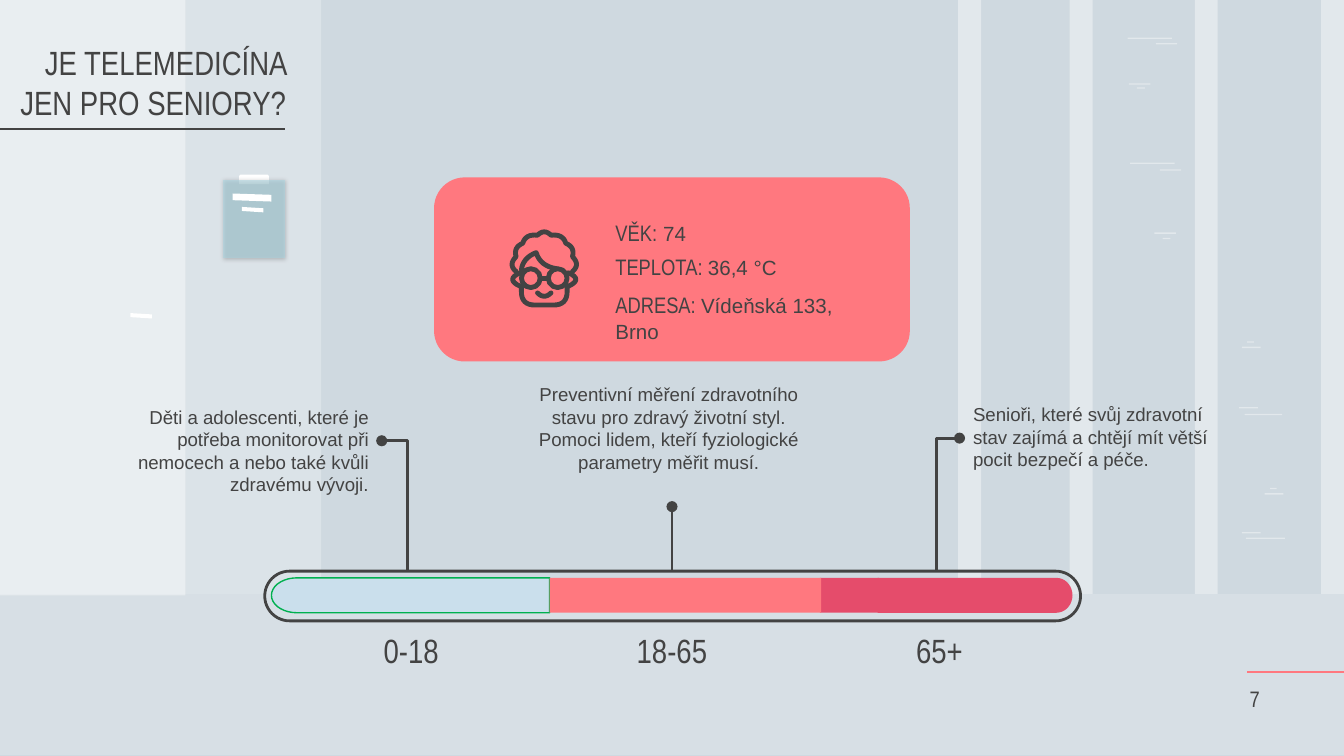
import math
from dataclasses import dataclass

import pptx
import pptx.dml.color
import pptx.enum.shapes
import pptx.enum.text
import pptx.oxml
import pptx.oxml.ns
import pptx.util

INK, CORAL, WHITE = "434343", "FF787F", "FFFFFF"
WALL_HEIGHT = 4.42
NARROW, SANS = "Arial Narrow", "Arial"
SHAPES = pptx.enum.shapes.MSO_SHAPE
ALIGN = pptx.enum.text.PP_ALIGN
ANCHOR = pptx.enum.text.MSO_ANCHOR


@dataclass
class Box:
    left: float
    top: float
    width: float
    height: float


@dataclass
class Span:
    text: str
    size: float = 10
    font: str = SANS


@dataclass
class Callout:
    dot: tuple
    foot: tuple
    bent: bool


def length(inches: float) -> pptx.util.Length:
    return pptx.util.Cm(inches * 2.54)


def color(value: str) -> pptx.dml.color.RGBColor:
    return pptx.dml.color.RGBColor.from_string(value)


def add_xml(parent, tag: str, **attributes):
    child = pptx.oxml.parse_xml(f'<a:{tag} {pptx.oxml.ns.nsdecls("a")}/>')
    for name, value in attributes.items():
        child.set(name, str(value))
    parent.append(child)
    return child


def paint(shape, fill=None, opacity=100, line=None, weight=1.5) -> None:
    shape.shadow.inherit = False
    if fill:
        shape.fill.solid()
        shape.fill.fore_color.rgb = color(fill)
        if opacity < 100:
            tint = shape._element.spPr.find(".//" + pptx.oxml.ns.qn("a:srgbClr"))
            add_xml(tint, "alpha", val=opacity * 1000)
    else:
        shape.fill.background()
    if line:
        shape.line.color.rgb = color(line)
        shape.line.width = pptx.util.Pt(weight)
    else:
        shape.line.fill.background()


def add_block(page, box: Box, kind=SHAPES.RECTANGLE, **style):
    shape = page.shapes.add_shape(kind, length(box.left), length(box.top),
                                  length(box.width), length(box.height))
    paint(shape, **style)
    return shape


def add_outline(page, points: list, closed=True, **style):
    corners = [(length(x), length(y)) for x, y in points]
    builder = page.shapes.build_freeform(*corners[0], scale=1.0)
    builder.add_line_segments(corners[1:], close=closed)
    shape = builder.convert_to_shape()
    paint(shape, **style)
    return shape


def add_line(page, start: tuple, end: tuple, line: str, bent=False):
    kinds = pptx.enum.shapes.MSO_CONNECTOR
    link = page.shapes.add_connector(kinds.ELBOW if bent else kinds.STRAIGHT,
                                     *map(length, start + end))
    link.line.color.rgb = color(line)
    link.line.width = pptx.util.Pt(1.5)
    properties = link._element.spPr
    if bent:
        properties.find(pptx.oxml.ns.qn("a:prstGeom")).set("prst", "bentConnector2")
    add_xml(properties, "effectLst")
    return link


def add_text(page, box: Box, spans: list, align=ALIGN.LEFT, anchor=ANCHOR.TOP,
             holder=None, margins=(0.1, 0.1, 0.1, 0.1), after=0) -> None:
    if holder is None:
        holder = page.shapes.add_textbox(0, 0, 0, 0)
    page.shapes._spTree.append(holder._element)  # bring to the front
    holder.left, holder.top = length(box.left), length(box.top)
    holder.width, holder.height = length(box.width), length(box.height)
    frame = holder.text_frame
    frame.word_wrap = True
    frame.auto_size = pptx.enum.text.MSO_AUTO_SIZE.NONE
    frame.vertical_anchor = anchor
    (frame.margin_left, frame.margin_top,
     frame.margin_right, frame.margin_bottom) = map(length, margins)
    para = frame.paragraphs[0]
    para.alignment = align
    para.space_before, para.space_after = pptx.util.Pt(0), pptx.util.Pt(after)
    settings = para._p.get_or_add_pPr()
    settings.set("marL", "0")
    settings.set("indent", "0")
    add_xml(settings, "buNone")
    for span in spans:
        run = para.add_run()
        run.text = span.text
        run.font.size, run.font.name = pptx.util.Pt(span.size), span.font
        run.font.color.rgb = color(INK)


def curve(points: list) -> list:
    """Flatten a start point followed by (control, end) pairs."""
    result = [points[0]]
    for control, end in zip(points[1::2], points[2::2]):
        start = result[-1]
        for t in (step / 8 for step in range(1, 9)):
            result.append(tuple((1 - t) ** 2 * a + 2 * t * (1 - t) * b + t * t * c
                                for a, b, c in zip(start, control, end)))
    return result


def mirror(points: list) -> list:
    return [(8.1 - x, y) for x, y in reversed(points)]


def rounded_end(center: float, radius: float) -> list:
    """Half an ellipse; a negative radius bulges to the left."""
    angles = [math.radians(a) for a in range(-90, 91, 10)]
    return [(center + radius * math.cos(a), 4.43 + 0.13 * math.sin(a)) for a in angles]


def draw_room(page) -> None:
    page.background.fill.solid()
    page.background.fill.fore_color.rgb = color("CFD9E0")
    add_block(page, Box(0, 0, 1.38, 4.43), fill=WHITE, opacity=40)
    # Clipboard
    add_block(page, Box(1.78, 1.3, 0.22, 0.07), SHAPES.ROUND_2_SAME_RECTANGLE, fill=WHITE)
    board = add_block(page, Box(1.66, 1.34, 0.46, 0.58), fill="86C7D8", opacity=51)
    effects = board._element.spPr.find(pptx.oxml.ns.qn("a:effectLst"))
    shadow = add_xml(effects, "outerShdw", blurRad=27940, dist=10160, dir=2520000)
    add_xml(add_xml(shadow, "srgbClr", val="000000"), "alpha", val=52000)
    for x, y, width, height in [(1.73, 1.44, 0.29, 0.06), (1.8, 1.54, 0.16, 0.04),
                                (0.97, 2.33, 0.16, 0.04)]:
        add_outline(page, [(x, y), (x + width, y + 0.01), (x + width, y + height),
                           (x, y + height - 0.01)], fill=WHITE)
    # Pillars and glass reflections
    for x in (7.13, 7.96, 8.89, 9.83):
        add_block(page, Box(x, 0, 0.17, WALL_HEIGHT), fill=WHITE, opacity=40)
    for x, y, width in [
            (8.39, 0.28, 0.33), (8.6, 0.32, 0.16), (8.41, 1.21, 0.33), (8.63, 1.26, 0.16),
            (8.4, 0.62, 0.16), (8.46, 0.65, 0.06), (8.59, 1.73, 0.16), (8.65, 1.77, 0.06),
            (9.27, 4, 0.29), (9.24, 3.96, 0.14), (9.26, 3.08, 0.28), (9.22, 3.03, 0.14),
            (9.41, 3.67, 0.14), (9.45, 3.63, 0.05), (9.24, 2.58, 0.14), (9.28, 2.54, 0.05)]:
        add_block(page, Box(x, y, width, 0.01), fill=WHITE, opacity=40)
    # Side wall and floor
    add_block(page, Box(0, 0, 2.39, WALL_HEIGHT), fill=WHITE, opacity=27)
    add_block(page, Box(0, WALL_HEIGHT, 10, 1.2), fill=WHITE, opacity=17)


def draw_face(page) -> None:
    half_hair = [(3.84, 2.02), (3.78, 1.97), (3.84, 1.91), (3.82, 1.84), (3.89, 1.81),
                 (3.91, 1.74), (4, 1.75)]
    half_chin = [(3.88, 2.13), (3.88, 2.15), (3.88, 2.17), (3.88, 2.27), (3.98, 2.27)]
    ear = [(3.87, 2.03), (3.76, 2.08), (3.87, 2.13)]
    strokes = [
        half_hair + [(4.05, 1.7)] + mirror(half_hair),
        half_chin + [(4.05, 2.27)] + mirror(half_chin),
        ear, mirror(ear),
        [(3.88, 2.01), (3.89, 1.92), (3.99, 1.88), (4.02, 1.98), (4.14, 2)],  # fringe
        [(4.02, 2.07), (4.05, 2.07), (4.08, 2.07)],  # bridge of the glasses
        [(4, 2.18), (4.05, 2.23), (4.1, 2.18)],  # smile
    ]
    for stroke in strokes:
        shape = add_outline(page, curve(stroke), closed=False, line=INK, weight=2.6)
        shape.line._get_or_add_ln().set("cap", "rnd")
    for x in (3.88, 4.08):
        add_block(page, Box(x, 2, 0.14, 0.14), SHAPES.OVAL, line=INK, weight=2.6)


def draw_scale(page) -> None:
    bar = add_block(page, Box(1.97, 4.25, 6.07, 0.37), SHAPES.ROUNDED_RECTANGLE, line=INK)
    bar.adjustments[0] = 0.5
    for callout in [Callout((2.84, 3.28), (3.03, 4.25), True),
                    Callout((5, 3.77), (5, 4.25), False),
                    Callout((7.14, 3.26), (6.97, 4.25), True)]:
        link = add_line(page, callout.dot, callout.foot, INK, callout.bent)
        add_xml(link.line._get_or_add_ln(), "headEnd", type="oval")
    add_block(page, Box(6.1, 4.3, 0.44, 0.26), fill="E54C6B")
    add_outline(page, [(6.53, 4.3)] + rounded_end(7.86, 0.12) + [(6.53, 4.56)], fill="E54C6B")
    add_outline(page, [(4.09, 4.3)] + rounded_end(2.21, -0.19) + [(4.09, 4.56)],
                fill="CADFEC", line="00B050", weight=0.75)
    add_block(page, Box(4.09, 4.3, 2.02, 0.26), fill=CORAL)
    for label, x in [("0-18", 2.61), ("18-65", 4.55), ("65+", 6.54)]:
        add_text(page, Box(x, 4.56, 0.9, 0.54), [Span(label, 18, NARROW)],
                 ALIGN.CENTER, ANCHOR.MIDDLE, margins=(0, 0.02, 0, 0))


def main() -> None:
    deck = pptx.Presentation()
    deck.slide_width = pptx.util.Cm(25.4)
    deck.slide_height = deck.slide_width * 9 // 16
    page = deck.slides.add_slide(deck.slide_layouts[3])
    title, middle_body, right_body = page.placeholders

    draw_room(page)
    add_line(page, (9.28, 5), (10, 5), CORAL)
    add_line(page, (0, 0.96), (2.12, 0.96), INK)

    # Patient card
    add_block(page, Box(3.23, 1.32, 3.54, 1.37), SHAPES.ROUNDED_RECTANGLE, fill=CORAL)
    add_text(page, Box(4.48, 1.5, 1.89, 0.28), [
        Span("VĚK:", 12, NARROW), Span(" ", 14, "Roboto Condensed"), Span("74", 11)])
    add_text(page, Box(4.48, 1.78, 1.89, 0.28),
             [Span("TEPLOTA: ", 12, NARROW), Span("36,4 °C", 11)])
    add_text(page, Box(4.48, 2.07, 2.12, 0.34),
             [Span("ADRESA: ", 12, NARROW), Span("Vídeňská 133, Brno", 11)])
    draw_face(page)

    # Age scale and its descriptions
    draw_scale(page)
    add_text(page, Box(0.82, 2.92, 2.02, 0.72), [Span(
        "Děti a adolescenti, které je potřeba monitorovat při nemocech "
        "a nebo také kvůli zdravému vývoji.")], ALIGN.RIGHT)
    add_text(page, Box(3.88, 2.75, 2.19, 0.91), [Span(
        "Preventivní měření zdravotního stavu pro zdravý životní styl. "
        "Pomoci lidem, kteří fyziologické parametry měřit musí.")],
        ALIGN.CENTER, holder=middle_body, after=16)
    add_text(page, Box(7.14, 2.9, 2.06, 0.72), [Span(
        "Senioři, které svůj zdravotní stav zajímá a chtějí mít větší "
        "pocit bezpečí a péče.")], holder=right_body, after=16)

    # Title and page number
    add_text(page, Box(9.2, 4.97, 0.35, 0.43), [Span("7", 12, NARROW)], anchor=ANCHOR.BOTTOM)
    add_text(page, Box(0, 0.69, 2.23, 0.32),
             [Span("JE TELEMEDICÍNA JEN PRO SENIORY?", 18, NARROW)],
             ALIGN.RIGHT, ANCHOR.BOTTOM, holder=title)
    deck.save("out.pptx")


if __name__ == "__main__":
    main()
